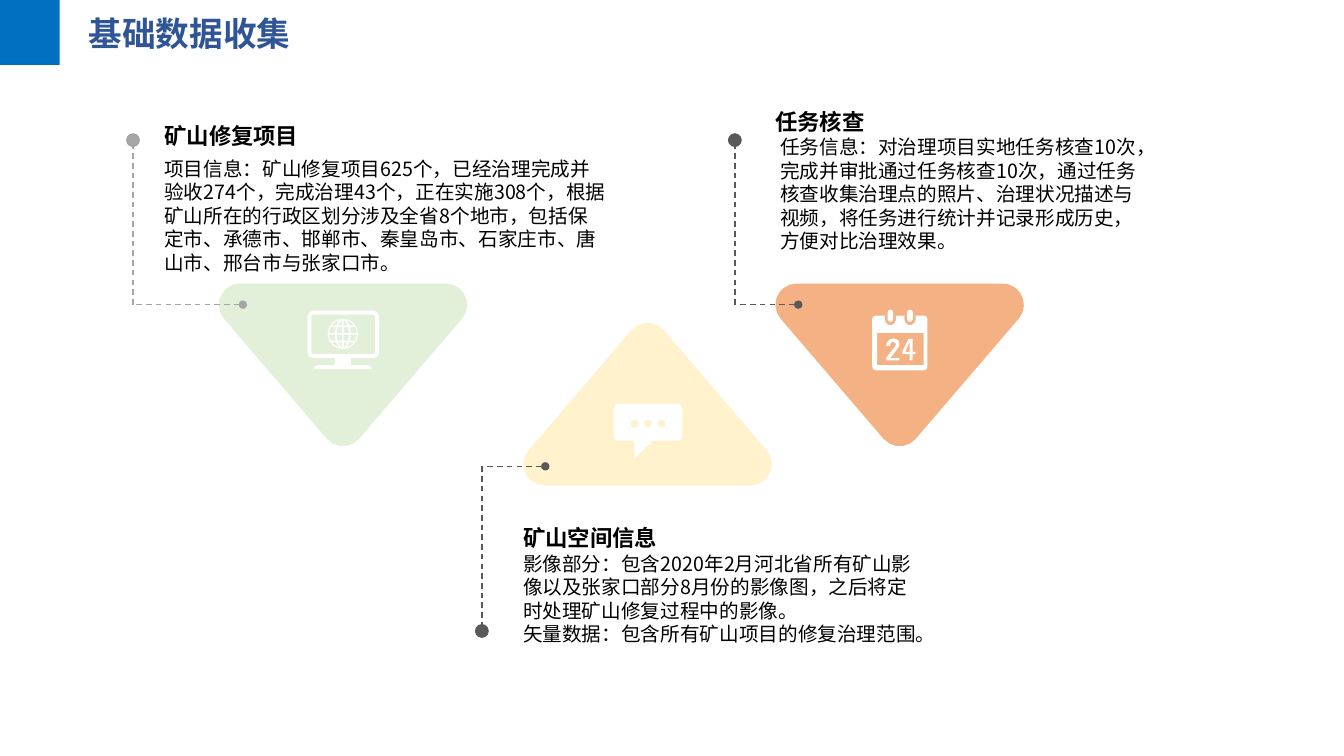
"""Build a slide on basic data collection for mine restoration."""
from math import atan2, cos, pi, sin, sqrt

from lxml.etree import SubElement
from pptx import Presentation
from pptx.dml.color import RGBColor
from pptx.enum.dml import MSO_LINE
from pptx.enum.shapes import MSO_CONNECTOR, MSO_SHAPE
from pptx.enum.text import MSO_ANCHOR, PP_ALIGN
from pptx.oxml.ns import qn
from pptx.util import Pt

FONT = "Noto Sans CJK SC"
COLORS = {"title": "2F5597", "bar": "0070C0", "green": "E2F0D9", "yellow": "FFF2CC",
          "orange": "F4B183", "white": "FFFFFF", "black": "000000",
          "gray": "A5A5A5", "dark": "595959"}
TITLE = "基础数据收集"
HEAD_H = 19.4
TOPICS = [
    {"head": "矿山修复项目", "head_at": (117.4, 87.1, 237), "body_at": (117.4, 112, 315.4, 85),
     "body": ["项目信息：矿山修复项目625个，已经治理完成并验收274个，完成治理43个，正在实施308个，"
              "根据矿山所在的行政区划分涉及全省8个地市，包括保定市、承德市、邯郸市、秦皇岛市、"
              "石家庄市、唐山市、邢台市与张家口市。"],
     "tri": (156.3, 202.5), "up": False, "fill": "green", "icon": "monitor",
     "leader": (95, 100.1, 217.6, 173.5), "line": "gray"},
    {"head": "矿山空间信息", "head_at": (373.8, 374.4, 283.7), "body_at": (373.7, 393.9, 283.7, 68),
     "body": ["影像部分：包含2020年2月河北省所有矿山影像以及张家口部分8月份的影像图，"
              "之后将定时处理矿山修复过程中的影像。",
              "矢量数据：包含所有矿山项目的修复治理范围。"],
     "tri": (373.9, 230.6), "up": True, "fill": "yellow", "icon": "bubble",
     "leader": (344.2, 450.7, 333.1, 389.5), "line": "dark"},
    {"head": "任务核查", "head_at": (553.7, 77, 280.8), "body_at": (557.3, 96.5, 264.2, 85),
     "body": ["任务信息：对治理项目实地任务核查10次，完成并审批通过任务核查10次，"
              "通过任务核查收集治理点的照片、治理状况描述与视频，将任务进行统计并记录形成历史，"
              "方便对比治理效果。"],
     "tri": (553.9, 202.5), "up": False, "fill": "orange", "icon": "calendar",
     "leader": (524.9, 100.1, 217.6, 570.2), "line": "dark"},
]
TRI_W, TRI_H, TRI_R = 177.5, 116.2, 15.2
DIGIT_TWO = [(88.6, 53.3), (82.1, 53.3), (86.8, 47.2), (88, 45.5), (88.6, 43.2), (87.8, 40.6),
             (86.2, 39.7), (84.2, 39.3), (81.2, 40.2), (79.2, 43.2), (79.2, 44.6), (82.1, 44.6),
             (82.3, 42.6), (84.2, 41.4), (86.2, 43.2), (85.5, 45), (79.2, 53), (79.2, 54.9),
             (88.6, 54.9)]
DIGIT_FOUR = [(95.8, 54.9), (98, 54.9), (98, 50.5), (100.2, 50.5), (100.2, 48.8), (98, 48.8),
              (98, 39.5), (95, 39.5), (90.7, 48.5), (90.7, 50.5), (95.8, 50.5)]
FOUR_HOLE = [(92.8, 48.8), (95.8, 41.8), (95.8, 48.8)]


def arc(cx, cy, r, start, end):
    steps = max(2, round(abs(end - start) * sqrt(r) / 1.3))
    angles = [start + (end - start) * i / steps for i in range(steps + 1)]
    return [(cx + r * cos(a), cy + r * sin(a)) for a in angles]


def rounded(centres, r):
    """Outline of equal circles joined in clockwise order."""
    pts = []
    for i, (x, y) in enumerate(centres):
        (px, py), (nx, ny) = centres[i - 1], centres[(i + 1) % len(centres)]
        start = atan2(y - py, x - px) - pi / 2
        turn = (atan2(ny - y, nx - x) - pi / 2 - start) % (2 * pi)
        pts += arc(x, y, r, start, start + turn)
    return pts


def box(x0, y0, x1, y1, r=0):
    a, b, c, d = x0 + r, y0 + r, x1 - r, y1 - r
    return rounded([(a, b), (c, b), (c, d), (a, d)], r) if r else [(a, b), (c, b), (c, d), (a, d)]


def circle(cx, cy, r):
    return arc(cx, cy, r, 0, 2 * pi)


def globe(cx, cy, r=10.9, rim=0.9, gap=0.6):
    inner = r - rim
    bands = [(-0.93, -0.55), (-0.55, 0), (0, 0.55), (0.55, 0.93)]
    slices = [(-1, -0.5), (-0.5, 0), (0, 0.5), (0.5, 1)]
    cells = [circle(cx, cy, r)]
    for top, bottom in bands:
        y0 = top * inner + gap * (top > -0.9)
        y1 = bottom * inner - gap * (bottom < 0.9)
        ys = [y0, (y0 + y1) / 2, y1]
        for k0, k1 in slices:
            west = [(cx + k0 * sqrt(inner ** 2 - y * y) + gap * (k0 > -1), cy + y) for y in ys]
            east = [(cx + k1 * sqrt(inner ** 2 - y * y) - gap * (k1 < 1), cy + y) for y in ys]
            cells.append(west + east[::-1])
    return cells


def notch(cx):
    return [(cx + 4, 23)] + arc(cx, 25.8, 4, 0, pi) + [(cx - 4, 23)]


RINGS = (82.1, 96.1)
MONITOR = [box(63.4, 19.4, 114.5, 53.3, 4), box(66.2, 22.3, 111.6, 50.4, 1.4),
           box(82.8, 53.3, 94.3, 58.3),
           arc(70.6, 61.2, 2.9, pi, 1.5 * pi) + arc(106.5, 61.2, 2.9, 1.5 * pi, 2 * pi)]
BUBBLE = [box(64.6, 58, 113.4, 84.2, 2.9), [(79.2, 84.2), (92.2, 84.2), (79.2, 97.2)],
          *[circle(x, 72, 2.9) for x in (79.2, 89, 98.8)]]
CALENDAR = [box(69.1, 23, 108.6, 62, 2.5), box(72.7, 35.3, 105.8, 58.3),
            *[notch(x) for x in RINGS]]
ICONS = {
    "monitor": [MONITOR, globe(88.6, 36)],
    "bubble": [BUBBLE],
    "calendar": [*[[box(x - 2, 18.7, x + 2, 27.4, 1.9)] for x in RINGS],
                 CALENDAR, [DIGIT_TWO], [DIGIT_FOUR, FOUR_HOLE]],
}


def paint(sp, color):
    sp.shadow.inherit = False
    sp.fill.solid()
    sp.fill.fore_color.rgb = RGBColor.from_string(COLORS[color])
    sp.line.fill.background()


def outline(shapes, origin, contours, color):
    paths = [[(Pt(origin[0] + x), Pt(origin[1] + y)) for x, y in c] for c in contours]
    fb = shapes.build_freeform(*paths[0][0], scale=1.0)
    for i, path in enumerate(paths):
        if i:
            fb.move_to(*path[0])
        fb.add_line_segments(path[1:], close=True)
    paint(fb.convert_to_shape(), color)


def write(sp, lines, size, color, bold=False):
    tf = sp.text_frame
    tf.word_wrap = True
    tf.vertical_anchor = MSO_ANCHOR.TOP
    for i, line in enumerate(lines):
        p = tf.paragraphs[0] if i == 0 else tf.add_paragraph()
        p.text = line
        p.alignment = PP_ALIGN.LEFT
        p.font.size, p.font.bold, p.font.name = Pt(size), bold, FONT
        p.font.color.rgb = RGBColor.from_string(COLORS[color])
        SubElement(p._p.pPr.find(qn("a:defRPr")), qn("a:ea"), typeface=FONT)
    return tf


def label(shapes, at, lines, size, bold=False):
    tf = write(shapes.add_textbox(*map(Pt, at)), lines, size, "black", bold)
    tf.margin_left = tf.margin_top = tf.margin_right = tf.margin_bottom = 0


def leader(shapes, start, end, color, dot_end, dot):
    cn = shapes.add_connector(MSO_CONNECTOR.STRAIGHT, *map(Pt, start + end))
    cn.line.color.rgb = RGBColor.from_string(COLORS[color])
    cn.line.width = Pt(1)
    cn.line.dash_style = MSO_LINE.DASH
    SubElement(cn.line._get_or_add_ln(), qn(dot_end), type="oval", w=dot, len=dot)
    SubElement(cn._element.spPr, qn("a:effectLst"))


def main():
    prs = Presentation()
    prs.slide_width, prs.slide_height = Pt(960), Pt(540)
    s = prs.slides.add_slide(prs.slide_layouts[5])
    title = s.shapes.title
    title.left, title.top, title.width, title.height = map(Pt, (56.2, 5.8, 289.4, 36))
    write(title, [TITLE], 24, "title", True)
    paint(s.shapes.add_shape(MSO_SHAPE.RECTANGLE, 0, 0, Pt(42.7), Pt(46.3)), "bar")

    r = TRI_R
    for t in TOPICS:
        near, far = (TRI_H - r, r) if t["up"] else (r, TRI_H - r)
        corners = [(r, near), (TRI_W - r, near), (TRI_W / 2, far)]
        grp = s.shapes.add_group_shape().shapes
        outline(grp, t["tri"], [rounded(corners[::-1] if t["up"] else corners, r)], t["fill"])
        for part in ICONS[t["icon"]]:
            outline(grp, t["tri"], part, "white")
    for t in TOPICS:
        label(s.shapes, t["head_at"] + (HEAD_H,), [t["head"]], 16, True)
        label(s.shapes, t["body_at"], t["body"], 14)
        x, dot_y, bend_y, tip_x = t["leader"]
        leader(s.shapes, (x, bend_y), (x, dot_y), t["line"], "a:tailEnd", "lg")
        leader(s.shapes, (tip_x, bend_y), (x, bend_y), t["line"], "a:headEnd", "med")
    prs.save("out.pptx")


if __name__ == "__main__":
    main()
